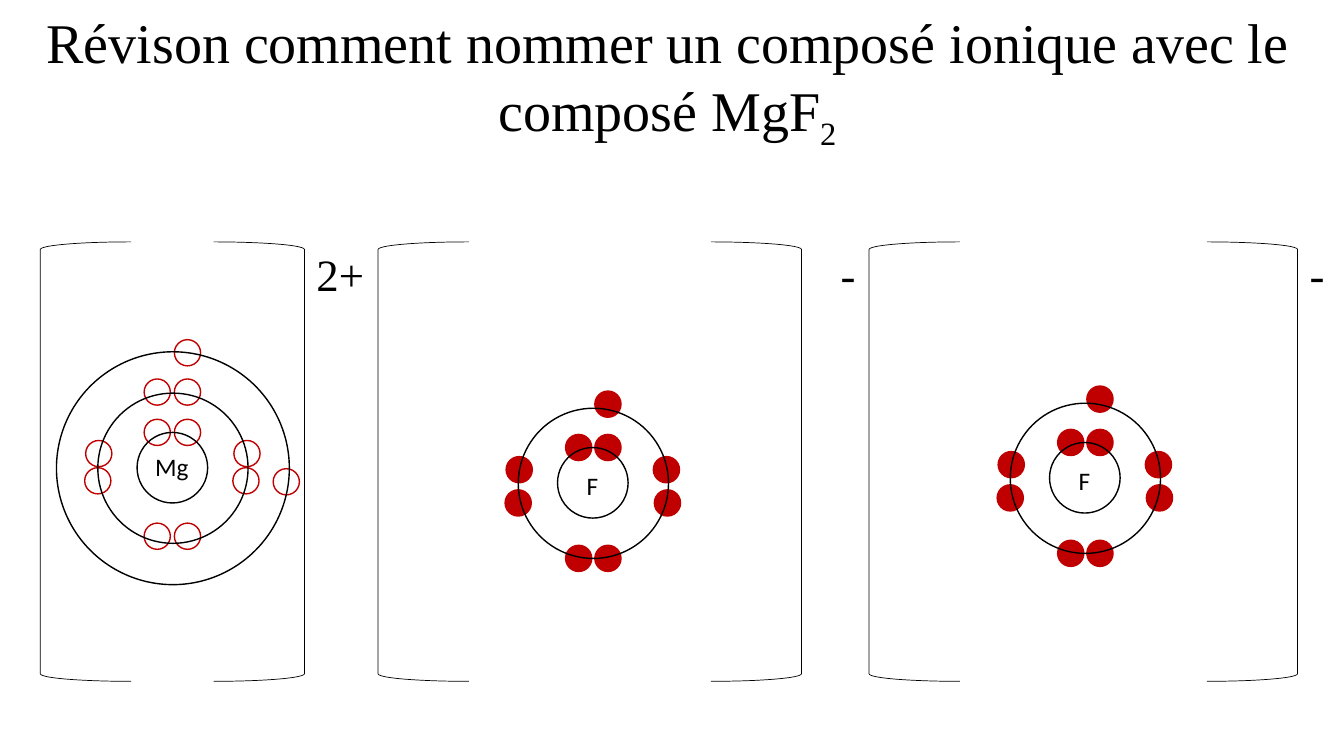
from pptx import Presentation
from pptx.dml.color import RGBColor
from pptx.enum.shapes import MSO_SHAPE
from pptx.enum.text import MSO_ANCHOR, MSO_AUTO_SIZE, PP_ALIGN
from pptx.util import Emu, Pt

OVAL = MSO_SHAPE.OVAL
LEFT, RIGHT = MSO_SHAPE.LEFT_BRACKET, MSO_SHAPE.RIGHT_BRACKET
MIDDLE = MSO_ANCHOR.MIDDLE
GROW, NO_FIT = MSO_AUTO_SIZE.SHAPE_TO_FIT_TEXT, MSO_AUTO_SIZE.NONE
CENTER = PP_ALIGN.CENTER
TITLE_ONLY = 5
PX = 9144
COLORS = {"ink": "000000", "electron": "C00000", "empty": "FFFFFF"}
SERIF, SANS = "Times New Roman", "Calibri"

MG_ELECTRONS = [(-28, -48), (2, -48), (61, -27), (60, 0), (2, -88), (-28, -88),
                (2, 55), (-28, 55), (-87, 0), (-86, -27), (2, -127), (100, 1)]
F_ELECTRONS = [(-27, -48), (2, -48), (2, 62), (60, -26), (-87, 7),
               (-27, 62), (61, 7), (2, -91), (-86, -26)]


class Deck:
    def __init__(self, width, height):
        self.prs = Presentation()
        self.prs.slide_width, self.prs.slide_height = self.px(width, height)
        self.s = self.prs.slides.add_slide(self.prs.slide_layouts[TITLE_ONLY])

    def px(self, *lengths):
        return [Emu(n * PX) for n in lengths]

    def color(self, name):
        return RGBColor.from_string(COLORS[name])

    def font(self, p, name, size):
        p.font.name = name
        p.font.size = Pt(size)
        p.font.color.rgb = self.color("ink")

    def title(self, box, text, subscript):
        sp = self.s.shapes.title
        sp.left, sp.top, sp.width, sp.height = self.px(*box)
        tf = sp.text_frame
        tf.word_wrap = True
        tf.auto_size = NO_FIT
        tf.vertical_anchor = MIDDLE
        p = tf.paragraphs[0]
        p.alignment = CENTER
        p.line_spacing = 0.9
        p.add_run().text = text
        r = p.add_run()
        r.text = subscript
        r.font._element.set("baseline", "-25000")
        self.font(p, SERIF, 40)

    def label(self, box, text, name, size):
        tf = self.s.shapes.add_textbox(*self.px(*box)).text_frame
        tf.word_wrap = False
        tf.auto_size = GROW
        p = tf.paragraphs[0]
        p.text = text
        self.font(p, name, size)

    def shape(self, kind, box, line, weight, fill=None):
        sp = self.s.shapes.add_shape(kind, *self.px(*box))
        sp.shadow.inherit = False
        if fill:
            sp.fill.solid()
            sp.fill.fore_color.rgb = self.color(fill)
        else:
            sp.fill.background()
        sp.line.color.rgb = self.color(line)
        sp.line.width = Pt(weight)

    def atom(self, x, y, symbol, symbol_box, electrons, fill, rings):
        dx, dy, w, h = symbol_box
        self.label((x + dx, y + dy, w, h), symbol, SANS, 18)
        for dx, dy in electrons:
            self.shape(OVAL, (x + dx, y + dy, 26, 26), "electron", 1, fill)
        for d in rings:
            self.shape(OVAL, (x - d // 2, y - d // 2, d, d), "ink", 1)

    def ion(self, left, right, charge, charge_left, charge_width):
        self.shape(LEFT, (left, 240, 90, 436), "ink", 0.5)
        self.shape(RIGHT, (right - 90, 240, 90, 436), "ink", 0.5)
        self.label((charge_left, 240, charge_width, 64), charge, SERIF, 32)


def main():
    deck = Deck(1333, 750)
    deck.title((7, 7, 1310, 145),
               "Révison comment nommer un composé ionique avec le composé MgF", "2")
    deck.atom(171, 464, "Mg", (-27, -21, 54, 40), MG_ELECTRONS, "empty", (70, 149, 231))
    for x, y in ((588, 479), (1076, 474)):
        deck.atom(x, y, "F", (-16, -17, 32, 40), F_ELECTRONS, "electron", (70, 149))
    deck.ion(40, 302, "2+", 304, 68)
    deck.ion(375, 795, "-", 824, 35)
    deck.ion(862, 1287, "-", 1289, 35)
    deck.prs.save("out.pptx")


if __name__ == "__main__":
    main()
